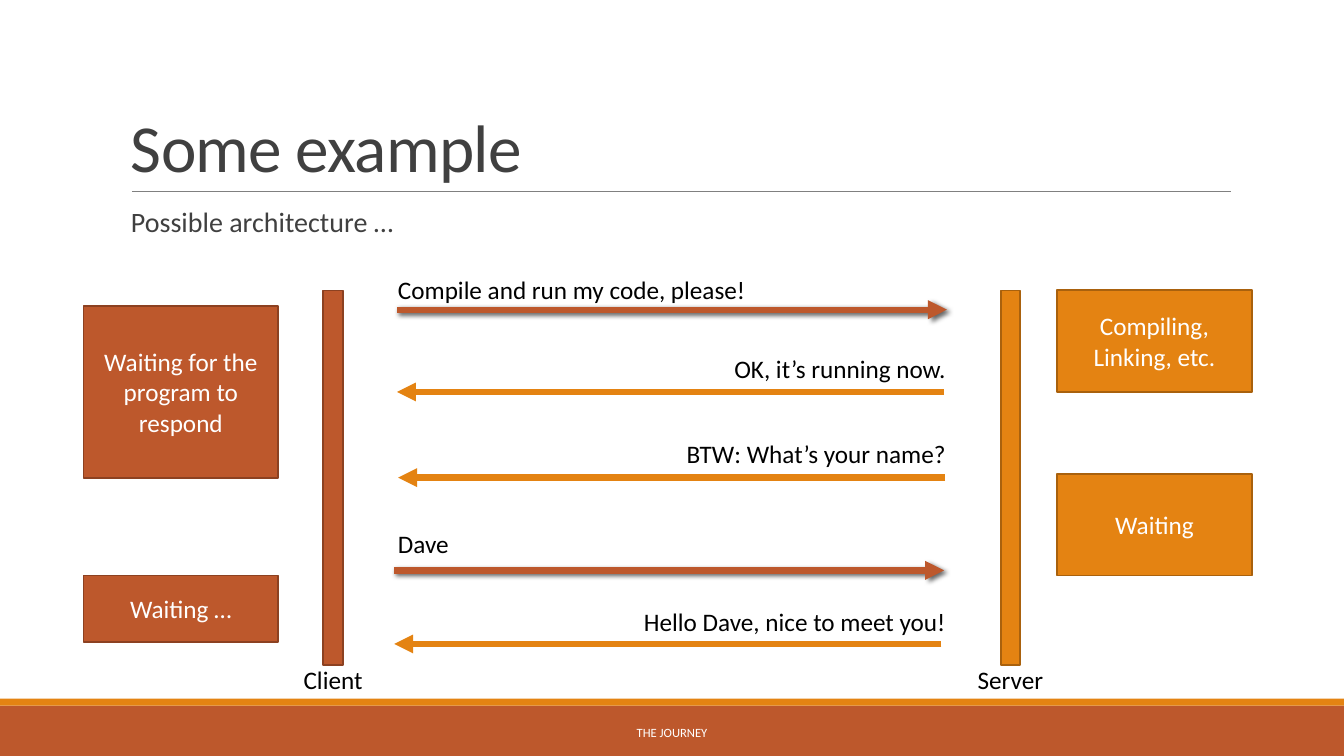
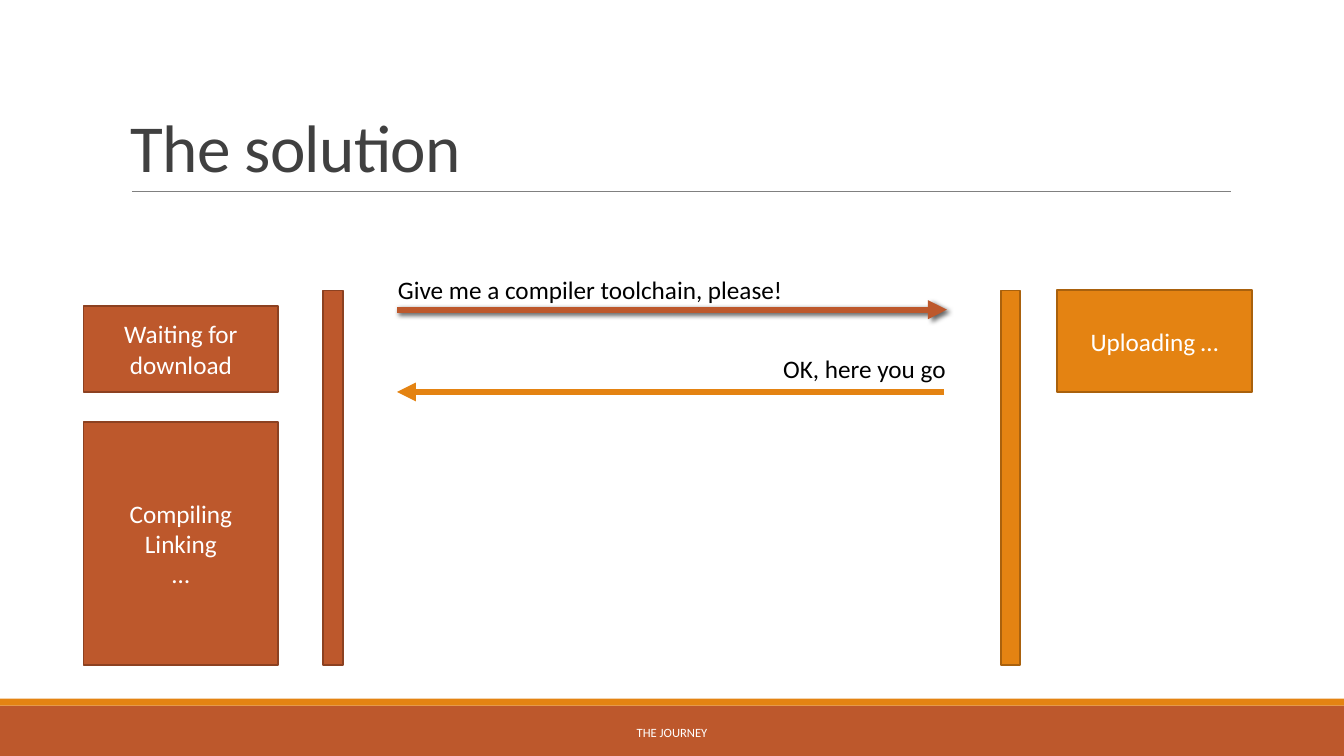
from dataclasses import dataclass

from lxml.etree import SubElement
from pptx import Presentation
from pptx.dml.color import RGBColor as RGB
from pptx.enum.shapes import MSO_CONNECTOR as CONN, MSO_SHAPE as SHAPE
from pptx.enum.text import MSO_ANCHOR as ANCHOR, PP_ALIGN as ALIGN
from pptx.oxml.ns import qn
from pptx.shapes.autoshape import Shape
from pptx.shapes.connector import Connector
from pptx.slide import Slide
from pptx.util import Pt


# Theme
@dataclass(frozen=True)
class Theme:
    font: str = "Calibri"
    client: str = "BD582C"
    client_edge: str = "8C4121"
    server: str = "E48312"
    server_edge: str = "A9610D"
    heading: str = "404040"
    rule: str = "808080"
    ink: str = "000000"
    light: str = "FFFFFF"
    title_size: float = 48
    body_size: float = 20
    label_size: float = 18
    footer_size: float = 9
    edge_width: float = 1.25
    arrow_width: float = 4.5
    rule_width: float = 0.5


T = Theme()

# Layout, in points
W, H = 960, 540
FOOTER_TOP, STRIPE_H = 504, 5
TEXT_X, TEXT_W = 86.4, 792
BAR_TOP, BAR_W, BAR_H = 207.4, 13.9, 267.8
CLIENT_BAR_X, SERVER_BAR_X = 231, 714.8
BOX_W, CLIENT_BOX_X, SERVER_BOX_X = 139.2, 59.6, 755
LANE_X, LANE_W = 277.2, 405.4
ARROW_LEFT, REQUEST_RIGHT, REPLY_RIGHT = 283.6, 676.4, 674.4
LABEL_H = 29


# Content
@dataclass(frozen=True)
class Activity:
    text: str
    top: float
    height: float
    by_client: bool = True


@dataclass(frozen=True)
class Message:
    text: str
    label_top: float
    arrow_y: float
    from_client: bool = True
    shift: float = 0


@dataclass(frozen=True)
class Sequence:
    title: str
    messages: list[Message]
    activities: list[Activity]
    intro: str = ""
    bar_names: bool = False


SEQUENCES = [
    Sequence(
        "Some example",
        [
            Message("Compile and run my code, please!", 192.4, 221.2),
            Message("OK, it’s running now.", 248.6, 280, False),
            Message("BTW: What’s your name?", 309.8, 341.2, False, 0.8),
            Message("Dave", 374, 407.4, True, -2),
            Message("Hello Dave, nice to meet you!", 429.6, 460, False, -2),
        ],
        [
            Activity("Compiling, Linking, etc.", 207.2, 72.8, False),
            Activity("Waiting", 338.4, 72.8, False),
            Activity("Waiting for the program to respond", 218.6, 122.6),
            Activity("Waiting …", 411, 47.6),
        ],
        intro="Possible architecture …",
        bar_names=True,
    ),
    Sequence(
        "The solution",
        [
            Message("Give me a compiler toolchain, please!", 192.4, 221.2),
            Message("OK, here you go", 248.6, 280, False),
        ],
        [
            Activity("Uploading …", 207.2, 72.8, False),
            Activity("Waiting for download", 218.6, 61.2),
            Activity("Compiling\nLinking\n…", 301.4, 173.8),
        ],
    ),
]


# Drawing helpers
def write(sp: Shape, text: str, size: float, color: str, align: ALIGN = ALIGN.LEFT,
          anchor: ANCHOR = ANCHOR.TOP, spacing: float = 1.0, tracking: int = 0) -> None:
    tf = sp.text_frame
    frame = {"word_wrap": True, "vertical_anchor": anchor,
             "margin_left": Pt(7.2), "margin_right": Pt(7.2),
             "margin_top": Pt(3.6), "margin_bottom": Pt(3.6)}
    for name, value in frame.items():
        setattr(tf, name, value)
    for i, line in enumerate(text.split("\n")):
        p = tf.add_paragraph() if i else tf.paragraphs[0]
        p.alignment, p.line_spacing = align, spacing
        r = p.add_run()
        r.text = line
        for name, value in {"name": T.font, "size": Pt(size)}.items():
            setattr(r.font, name, value)
        r.font.color.rgb = RGB.from_string(color)
        if tracking:
            r.font._element.set("spc", str(tracking))


def add_text(s: Slide, x: float, y: float, w: float, h: float, text: str,
             size: float, color: str, **fmt) -> None:
    write(s.shapes.add_textbox(Pt(x), Pt(y), Pt(w), Pt(h)), text, size, color, **fmt)


def add_rect(s: Slide, x: float, y: float, w: float, h: float, fill: str,
             edge: str = "") -> Shape:
    sp = s.shapes.add_shape(SHAPE.RECTANGLE, Pt(x), Pt(y), Pt(w), Pt(h))
    sp.shadow.inherit = False
    sp.fill.solid()
    sp.fill.fore_color.rgb = RGB.from_string(fill)
    if edge:
        sp.line.color.rgb = RGB.from_string(edge)
        sp.line.width = Pt(T.edge_width)
    else:
        sp.line.fill.background()
    return sp


def add_line(s: Slide, x1: float, x2: float, y: float, color: str, width: float,
             arrow: bool = False, shadow: bool = False) -> Connector:
    cx = s.shapes.add_connector(CONN.STRAIGHT, Pt(x1), Pt(y), Pt(x2), Pt(y))
    cx.line.color.rgb = RGB.from_string(color)
    cx.line.width = Pt(width)
    if arrow:
        SubElement(cx.line._get_or_add_ln(), qn("a:tailEnd"), type="triangle")
    effects = SubElement(cx._element.spPr, qn("a:effectLst"))
    if shadow:
        outer = SubElement(effects, qn("a:outerShdw"), blurRad=str(Pt(3)),
                           dist=str(Pt(2)), dir=str(45 * 60000), rotWithShape="0")
        tint = SubElement(outer, qn("a:srgbClr"), val=T.ink)
        SubElement(tint, qn("a:alpha"), val="60000")
    return cx


# Shared slide frame
def add_frame(s: Slide, title: str) -> None:
    add_rect(s, 0, FOOTER_TOP, W, H - FOOTER_TOP, T.client)
    add_rect(s, 0, FOOTER_TOP - STRIPE_H, W, STRIPE_H, T.server)
    add_line(s, 94.2, 879, 136.6, T.rule, T.rule_width)
    add_text(s, TEXT_X, 22.4, TEXT_W, 114.2, title, T.title_size, T.heading,
             anchor=ANCHOR.BOTTOM, spacing=0.85, tracking=-50)
    add_text(s, 290.2, 508.6, 379.6, 28.8, "THE JOURNEY", T.footer_size, T.light,
             align=ALIGN.CENTER, anchor=ANCHOR.MIDDLE)


# Sequence diagram parts
def add_bar(s: Slide, x: float, fill: str, edge: str, name: str) -> None:
    add_rect(s, x, BAR_TOP, BAR_W, BAR_H, fill, edge)
    if name:
        w = 80
        add_text(s, x + (BAR_W - w) / 2, 471.2, w, LABEL_H, name, T.label_size, T.ink,
                 align=ALIGN.CENTER)


def add_message(s: Slide, m: Message) -> None:
    if m.from_client:
        start, end, color, align = ARROW_LEFT, REQUEST_RIGHT, T.client, ALIGN.LEFT
    else:
        start, end, color, align = REPLY_RIGHT, ARROW_LEFT, T.server, ALIGN.RIGHT
    add_line(s, start + m.shift, end + m.shift, m.arrow_y, color, T.arrow_width,
             arrow=True, shadow=m.from_client)
    add_text(s, LANE_X, m.label_top, LANE_W, LABEL_H, m.text, T.label_size, T.ink,
             align=align)


def add_activity(s: Slide, a: Activity) -> None:
    x, fill, edge = ((CLIENT_BOX_X, T.client, T.client_edge) if a.by_client
                     else (SERVER_BOX_X, T.server, T.server_edge))
    sp = add_rect(s, x, a.top, BOX_W, a.height, fill, edge)
    write(sp, a.text, T.label_size, T.light, align=ALIGN.CENTER, anchor=ANCHOR.MIDDLE)


def add_sequence(s: Slide, q: Sequence) -> None:
    add_frame(s, q.title)
    if q.intro:
        add_text(s, TEXT_X, 145.4, TEXT_W, 32, q.intro, T.body_size, T.heading,
                 spacing=0.9)
    add_bar(s, CLIENT_BAR_X, T.client, T.client_edge, "Client" if q.bar_names else "")
    add_bar(s, SERVER_BAR_X, T.server, T.server_edge, "Server" if q.bar_names else "")
    for m in q.messages:
        add_message(s, m)
    for a in q.activities:
        add_activity(s, a)


def main() -> None:
    prs = Presentation()
    prs.slide_width, prs.slide_height = Pt(W), Pt(H)
    for q in SEQUENCES:
        add_sequence(prs.slides.add_slide(prs.slide_layouts[6]), q)
    prs.save("out.pptx")


if __name__ == "__main__":
    main()
